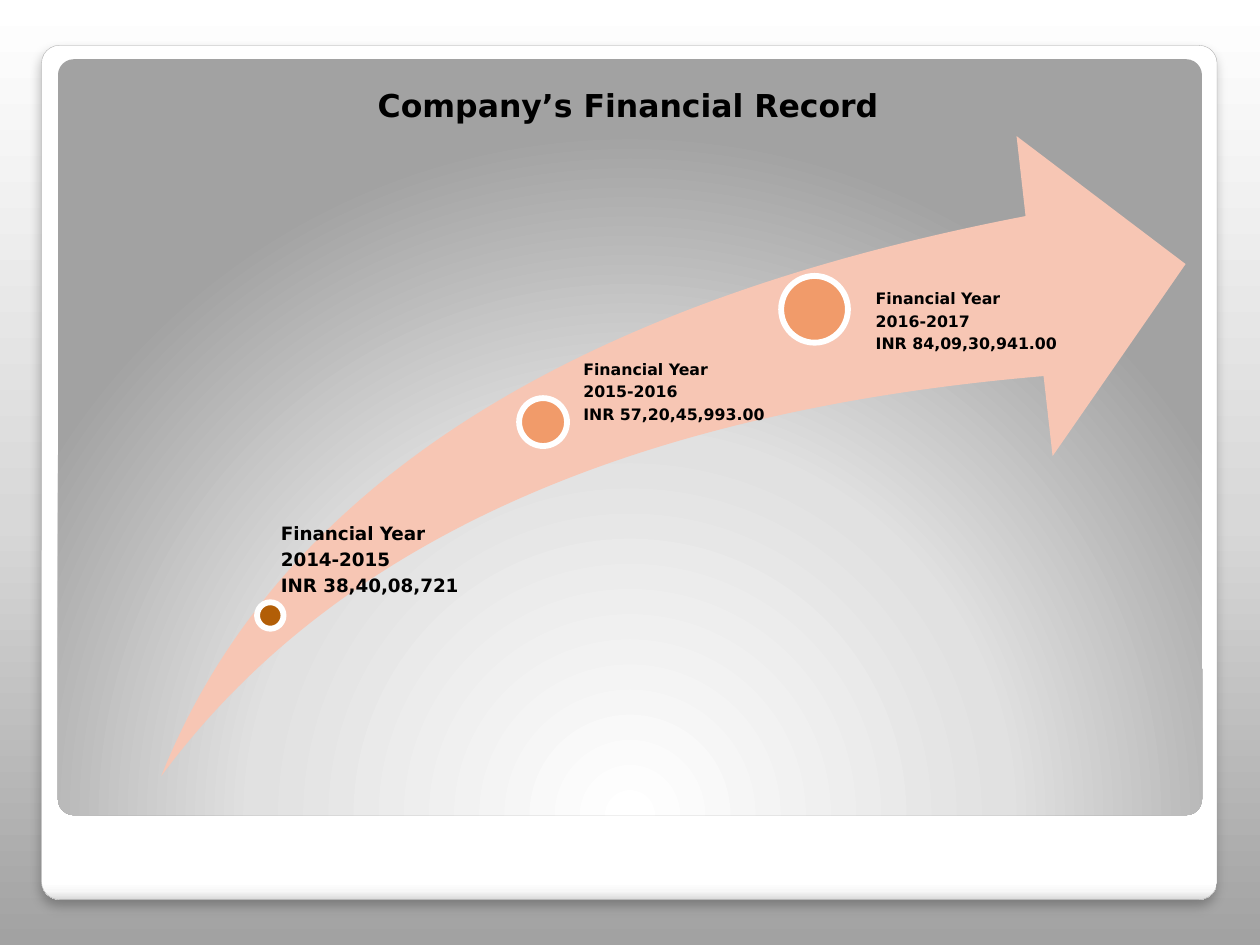
import lxml.etree
import pptx
import pptx.dml.color
import pptx.enum.shapes
import pptx.enum.text
import pptx.oxml
import pptx.oxml.ns
import pptx.util

Inches = pptx.util.Inches
Pt = pptx.util.Pt
KINDS = pptx.enum.shapes.MSO_SHAPE
NS = pptx.oxml.ns.nsdecls("a")
FONT = "DejaVu Sans"

PANEL_PATH = (
    '<a:path path="circle"><a:fillToRect l="50000" t="175000" '
    'r="50000" b="-75000"/></a:path>'
)
SHADOW = (
    f'<a:effectLst {NS}><a:outerShdw blurRad="76200" dist="50800" '
    'dir="5400000" algn="tl" rotWithShape="0"><a:srgbClr val="000000">'
    '<a:alpha val="25000"/></a:srgbClr></a:outerShdw></a:effectLst>'
)

STAGES = [
    ((2.04, 4.78, 0.21), "B25E07", (2.12, 4.16, 1.9, 2.19), 0.11, 10.5,
     ["Financial Year", "2014-2015", "INR 38,40,08,721"]),
    ((4.12, 3.16, 0.38), "F19B6A", (4.43, 2.87, 2.03, 3.47), 0.2, 9,
     ["Financial Year", "2015-2016", "INR 57,20,45,993.00"]),
    ((6.2, 2.19, 0.53), "F19B6A", (6.67, 2.31, 2.68, 3.03), 0.28, 9,
     ["Financial Year", "2016-2017", "INR 84,09,30,941.00"]),
]


def color(code):
    return pptx.dml.color.RGBColor.from_string(code)


def linear(angle):
    return f'<a:lin ang="{angle * 60000}" scaled="0"/>'


def blend(fill, root, stops, course):
    fill.solid()
    old = next(root.iter(pptx.oxml.ns.qn("a:solidFill")))
    marks = "".join(
        f'<a:gs pos="{pos * 1000}"><a:srgbClr val="{code}"/></a:gs>'
        for pos, code in stops
    )
    new = pptx.oxml.parse_xml(
        f'<a:gradFill {NS} rotWithShape="1"><a:gsLst>{marks}</a:gsLst>'
        f"{course}</a:gradFill>"
    )
    old.getparent().replace(old, new)


def add_shape(slide, kind, box, code=None, adjust=()):
    shape = slide.shapes.add_shape(kind, *map(Inches, box))
    shape.shadow.inherit = False
    shape.line.fill.background()
    for index, value in enumerate(adjust):
        shape.adjustments[index] = value
    if code:
        shape.fill.solid()
        shape.fill.fore_color.rgb = color(code)
    return shape


def outline(shape, code, width):
    shape.line.color.rgb = color(code)
    shape.line.width = Pt(width)


def add_text(slide, box, insets, lines, size):
    frame = slide.shapes.add_textbox(*map(Inches, box)).text_frame
    frame.word_wrap = True
    (frame.margin_left, frame.margin_top,
     frame.margin_right, frame.margin_bottom) = map(Inches, insets)
    frame.text = "\n".join(lines)
    for para in frame.paragraphs:
        for run in para.runs:
            run.font.name = FONT
            run.font.size = Pt(size)
            run.font.bold = True
            run.font.color.rgb = color("000000")
    return frame


def add_frame(slide):
    back = slide.background.fill
    back.solid()
    blend(back, slide.element,
          [(0, "A2A2A2"), (45, "D8D8D8"), (100, "FFFFFF")], linear(270))

    card = add_shape(slide, KINDS.ROUNDED_RECTANGLE,
                     (0.33, 0.36, 9.33, 6.78), adjust=[0.021])
    blend(card.fill, card.element.spPr,
          [(0, "FFFFFF"), (98, "FFFFFF"), (99, "F7F7F7"), (100, "DADADA")],
          linear(90))
    outline(card, "A4A4A4", 0.16)
    props = card.element.spPr
    empty = props.find(pptx.oxml.ns.qn("a:effectLst"))
    props.replace(empty, pptx.oxml.parse_xml(SHADOW))

    panel = add_shape(slide, KINDS.ROUNDED_RECTANGLE,
                      (0.46, 0.47, 9.08, 6), adjust=[0.021])
    blend(panel.fill, panel.element.spPr,
          [(0, "FFFFFF"), (55, "E1E1E1"), (100, "A2A2A2")], PANEL_PATH)


def add_title(slide):
    frame = add_text(slide, (0.46, 0.58, 8.95, 0.6), (0.2, 0.1, 0.1, 0.05),
                     ["Company’s Financial Record"], 18)
    para = frame.paragraphs[0]
    para.alignment = pptx.enum.text.PP_ALIGN.CENTER
    para.space_before = Pt(2.5)


def add_stage(slide, dot, code, box, inset, size, lines):
    left, top, width = dot
    circle = add_shape(slide, KINDS.OVAL, (left, top, width, width), code)
    outline(circle, "FFFFFF", 3.35)
    frame = add_text(slide, box, (inset, 0, 0, 0), lines, size)
    for para in frame.paragraphs:
        para.line_spacing = 0.9
        para.space_after = Pt(size * 0.35)


def main():
    deck = pptx.Presentation()
    deck.slide_width = Inches(10)
    deck.slide_height = Inches(7.5)
    slide = deck.slides.add_slide(deck.slide_layouts[6])
    add_frame(slide)
    add_title(slide)
    add_shape(slide, KINDS.SWOOSH_ARROW, (1.28, 1.08, 8.13, 5.08),
              "F7C6B4", [0.25, 0.25])
    for stage in STAGES:
        add_stage(slide, *stage)
    deck.save("out.pptx")


if __name__ == "__main__":
    main()
